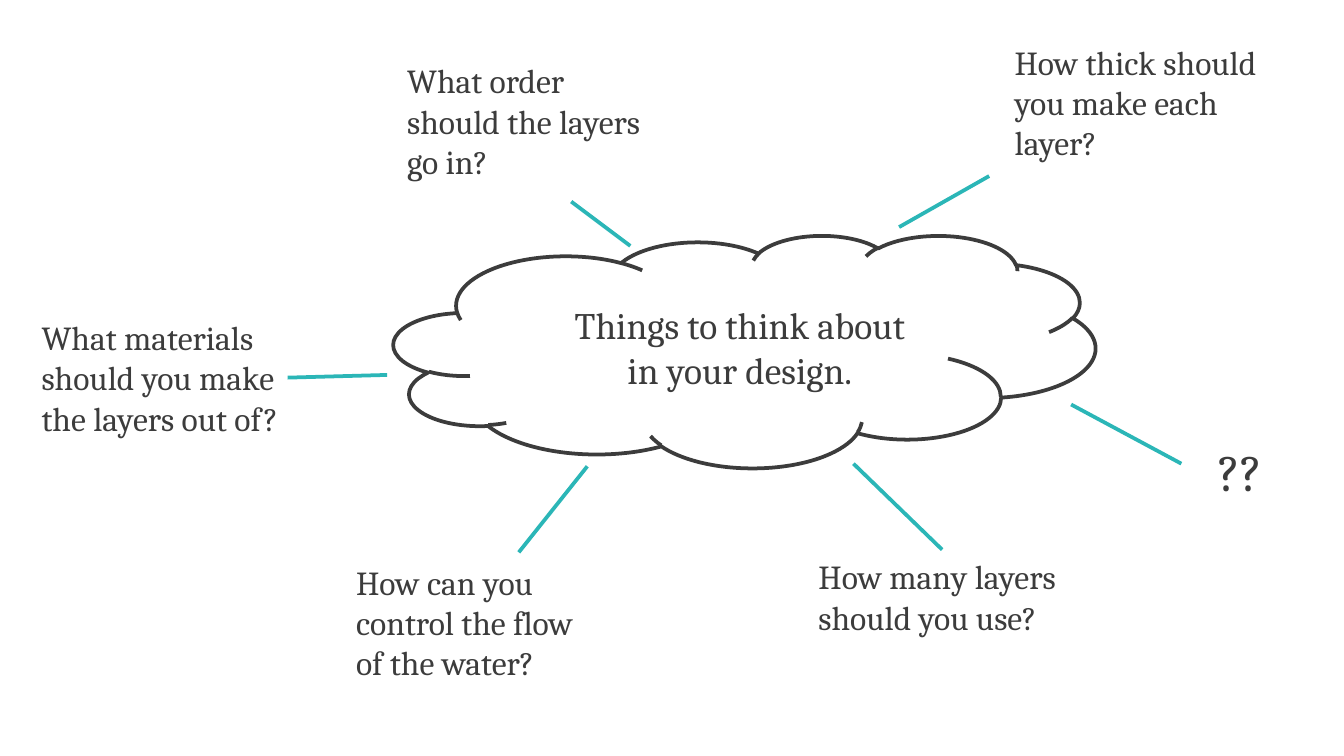
from dataclasses import dataclass

from lxml import etree
from pptx import Presentation
from pptx import util as u
from pptx.dml.color import RGBColor
from pptx.enum import shapes, text
from pptx.oxml.ns import qn


@dataclass(frozen=True)
class Theme:
    ink: RGBColor = RGBColor(0x3C, 0x3C, 0x3C)
    accent: RGBColor = RGBColor(0x2B, 0xB6, 0xB7)
    font: str = "Cambria"
    topic_size: int = 20
    question_size: int = 18
    open_size: int = 28
    stroke: int = 2
    inset: float = 0.05


class MindMap:
    def __init__(self, slide, theme):
        self.slide = slide
        self.theme = theme

    def cloud(self, *box):
        outline = self.slide.shapes.add_shape(
            shapes.MSO_SHAPE.CLOUD, *map(u.Inches, box))
        outline.shadow.inherit = False
        outline.fill.background()
        outline.line.color.rgb = self.theme.ink
        outline.line.width = u.Pt(self.theme.stroke)

    def label(self, wording, box, size, align=text.PP_ALIGN.LEFT):
        frame = self.slide.shapes.add_textbox(*map(u.Inches, box)).text_frame
        frame.word_wrap = True
        frame.auto_size = text.MSO_AUTO_SIZE.SHAPE_TO_FIT_TEXT
        inset = u.Inches(self.theme.inset)
        frame.margin_left = frame.margin_right = inset
        frame.margin_top = frame.margin_bottom = inset
        paragraph = frame.paragraphs[0]
        paragraph.text = wording
        paragraph.alignment = align
        paragraph.font.name = self.theme.font
        paragraph.font.size = u.Pt(size)
        paragraph.font.color.rgb = self.theme.ink

    def branch(self, start, end):
        link = self.slide.shapes.add_connector(
            shapes.MSO_CONNECTOR.STRAIGHT, *map(u.Inches, (*start, *end)))
        link.line.color.rgb = self.theme.accent
        link.line.width = u.Pt(self.theme.stroke)
        etree.SubElement(link._element.spPr, qn("a:effectLst"))


def main():
    theme = Theme()
    deck = Presentation()
    deck.slide_width = u.Inches(10)
    deck.slide_height = deck.slide_width * 9 // 16
    blank_layout = deck.slide_layouts[6]
    mind_map = MindMap(deck.slides.add_slide(blank_layout), theme)

    mind_map.cloud(2.93, 1.75, 5.22, 1.73)
    mind_map.label("Things to think about in your design.",
                   (4.11, 2.2, 2.79, 0.77), theme.topic_size,
                   text.PP_ALIGN.CENTER)

    # Wording, text box, branch start, branch end, type size
    size = theme.question_size
    questions = [
        ("How thick should you make each layer?",
         (7.5, 0.26, 1.96, 1.31), (6.69, 1.69), (7.36, 1.31), size),
        ("How many layers should you use?",
         (6.04, 4.09, 1.94, 1.01), (6.35, 3.45), (7.01, 4.09), size),
        ("What order should the layers go in?",
         (2.98, 0.4, 1.94, 1.01), (4.25, 1.5), (4.69, 1.83), size),
        ("What materials should you make the layers out of?",
         (0.26, 2.31, 1.94, 1.31), (2.14, 2.81), (2.88, 2.79), size),
        ("How can you control the flow of the water?",
         (2.6, 4.13, 1.94, 1.01), (3.86, 4.11), (4.37, 3.47), size),
        ("??",
         (9.02, 3.22, 1.96, 0.57), (7.97, 3.01), (8.79, 3.45), theme.open_size),
    ]
    for wording, box, start, end, type_size in questions:
        mind_map.branch(start, end)
        mind_map.label(wording, box, type_size)

    deck.save("out.pptx")


if __name__ == "__main__":
    main()
